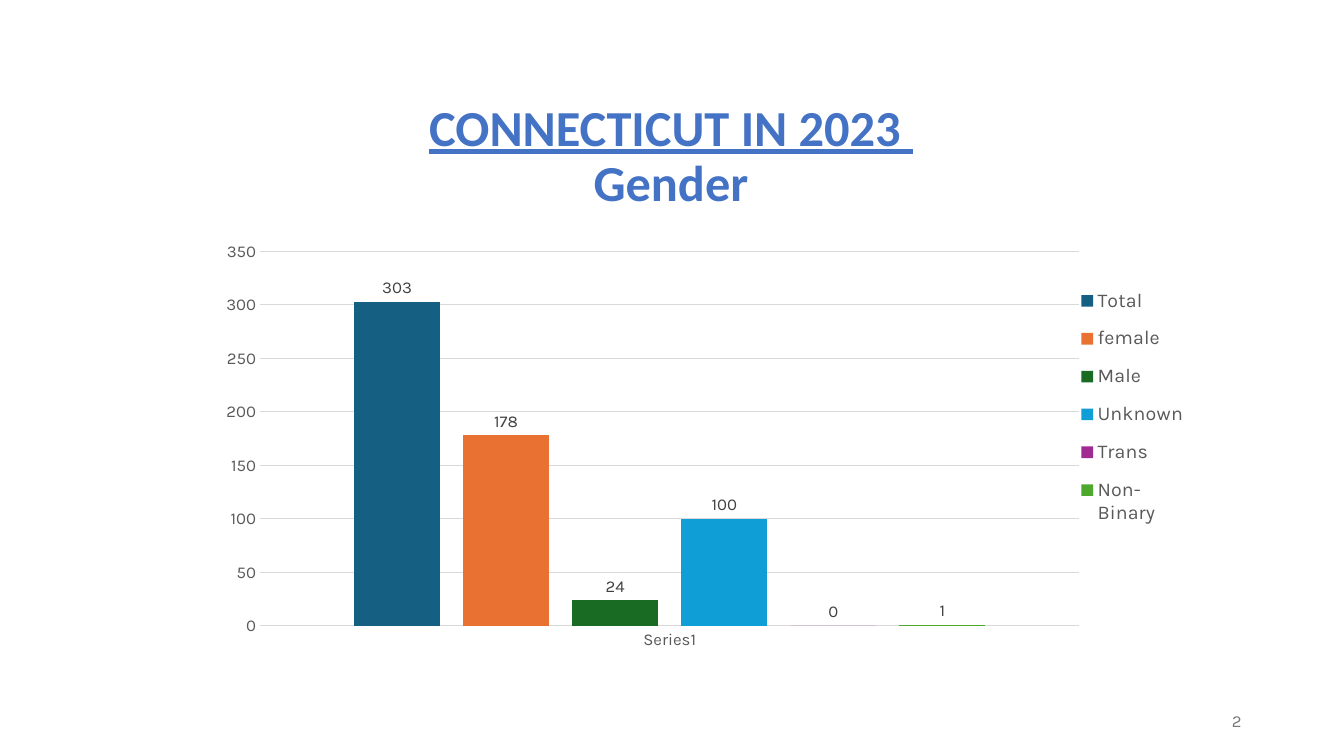
"""Build the slide on gender in Connecticut in 2023: a title and a column chart."""
import pptx
import pptx.chart.data
import pptx.dml.color
import pptx.enum.chart
import pptx.enum.text
import pptx.oxml
import pptx.oxml.ns
import pptx.util

Pt = pptx.util.Pt
COLORS = {
    "title": "4472C4", "page": "797979", "axis": "595959",
    "grid": "D9D9D9", "label": "404040", "base": "000000",
}
GENDERS = [
    ("Total ", 303, "156082"),
    ("female", 178, "E97132"),
    ("Male", 24, "196B24"),
    ("Unknown", 100, "0F9ED5"),
    ("Trans", 0, "A02B93"),
    ("Non-Binary", 1, "4EA72E"),
]
NUMBER_FORMAT = "0;[Red]0"


def style_font(font, name, size, color):
    font.name = name
    font.size = Pt(size)
    font.color.rgb = pptx.dml.color.RGBColor.from_string(color)


def set_layout(parent, position, target, x, y, width, height):
    for old in parent.findall(pptx.oxml.ns.qn("c:layout")):
        parent.remove(old)
    inner = f'<c:layoutTarget val="{target}"/>' if target else ""
    parent.insert(position, pptx.oxml.parse_xml(
        f'<c:layout {pptx.oxml.ns.nsdecls("c")}><c:manualLayout>{inner}'
        '<c:xMode val="edge"/><c:yMode val="edge"/>'
        f'<c:x val="{x}"/><c:y val="{y}"/><c:w val="{width}"/><c:h val="{height}"/>'
        '</c:manualLayout></c:layout>'))


deck = pptx.Presentation()
deck.slide_width, deck.slide_height = Pt(960), Pt(540)
slide = deck.slides.add_slide(deck.slide_layouts[5])

page_number = slide.shapes.add_textbox(Pt(678), Pt(500.5), Pt(216), Pt(28.75))
page_number.text_frame.word_wrap = True
page_number.text_frame.vertical_anchor = pptx.enum.text.MSO_ANCHOR.MIDDLE
page_line = page_number.text_frame.paragraphs[0]
page_line.alignment = pptx.enum.text.PP_ALIGN.RIGHT
page_run = page_line.add_run()
page_run.text = "2"
style_font(page_run.font, "Karla", 12, COLORS["page"])

counts = pptx.chart.data.CategoryChartData(number_format=NUMBER_FORMAT)
counts.categories = ["Series1"]
for gender, count, _ in GENDERS:
    counts.add_series(gender, [count])
chart = slide.shapes.add_chart(
    pptx.enum.chart.XL_CHART_TYPE.COLUMN_CLUSTERED,
    Pt(120), Pt(48), Pt(731.5), Pt(416), counts).chart
chart.has_title = False
style_font(chart.font, "Karla", 10, COLORS["base"])

columns = chart.plots[0]
columns.vary_by_categories = False
columns.gap_width = 219
columns.overlap = -27
for series, (_, _, color) in zip(columns.series, GENDERS):
    series.invert_if_negative = False
    series.format.fill.solid()
    series.format.fill.fore_color.rgb = pptx.dml.color.RGBColor.from_string(color)
    labels = series.data_labels
    labels.show_value = True
    labels.position = pptx.enum.chart.XL_LABEL_POSITION.OUTSIDE_END
    labels.number_format = NUMBER_FORMAT
    labels.number_format_is_linked = False
    style_font(labels.font, "Karla", 12, COLORS["label"])

genders_axis, count_axis = chart.category_axis, chart.value_axis
for axis in (genders_axis, count_axis):
    axis.major_tick_mark = pptx.enum.chart.XL_TICK_MARK.NONE
    axis.minor_tick_mark = pptx.enum.chart.XL_TICK_MARK.NONE
    style_font(axis.tick_labels.font, "Karla", 12, COLORS["axis"])
count_axis.minimum_scale, count_axis.maximum_scale, count_axis.major_unit = 0, 350, 50
count_axis.tick_labels.number_format = NUMBER_FORMAT
count_axis.tick_labels.number_format_is_linked = False
count_axis.format.line.fill.background()
for line in (genders_axis.format.line, count_axis.major_gridlines.format.line):
    line.color.rgb = pptx.dml.color.RGBColor.from_string(COLORS["grid"])
    line.width = Pt(0.75)

chart.has_legend = True
legend = chart.legend
legend.position = pptx.enum.chart.XL_LEGEND_POSITION.RIGHT
legend.include_in_layout = False
style_font(legend.font, "Karla", 14, COLORS["axis"])
plot_area = chart.element.find(".//" + pptx.oxml.ns.qn("c:plotArea"))
legend_area = chart.element.find(".//" + pptx.oxml.ns.qn("c:legend"))
set_layout(plot_area, 0, "inner", 0.09, 0.32, 0.8, 0.65)
set_layout(legend_area, 1, None, 0.89, 0.36, 0.11, 0.46)

title = slide.shapes.title
title.left, title.top, title.width, title.height = Pt(169), Pt(70), Pt(620.5), Pt(96)
title.text_frame.word_wrap = True
title.text_frame.auto_size = pptx.enum.text.MSO_AUTO_SIZE.NONE
title.text_frame.vertical_anchor = pptx.enum.text.MSO_ANCHOR.TOP
heading = title.text_frame.paragraphs[0]
heading.alignment = pptx.enum.text.PP_ALIGN.CENTER
heading.line_spacing = 0.9
for words, underlined in (("CONNECTICUT IN 2023 ", True), ("Gender", False)):
    run = heading.add_run()
    run.text = words
    style_font(run.font, "Calibri", 36, COLORS["title"])
    run.font.bold = True
    run.font.underline = underlined
    if underlined:
        heading.add_line_break()

deck.save("out.pptx")
